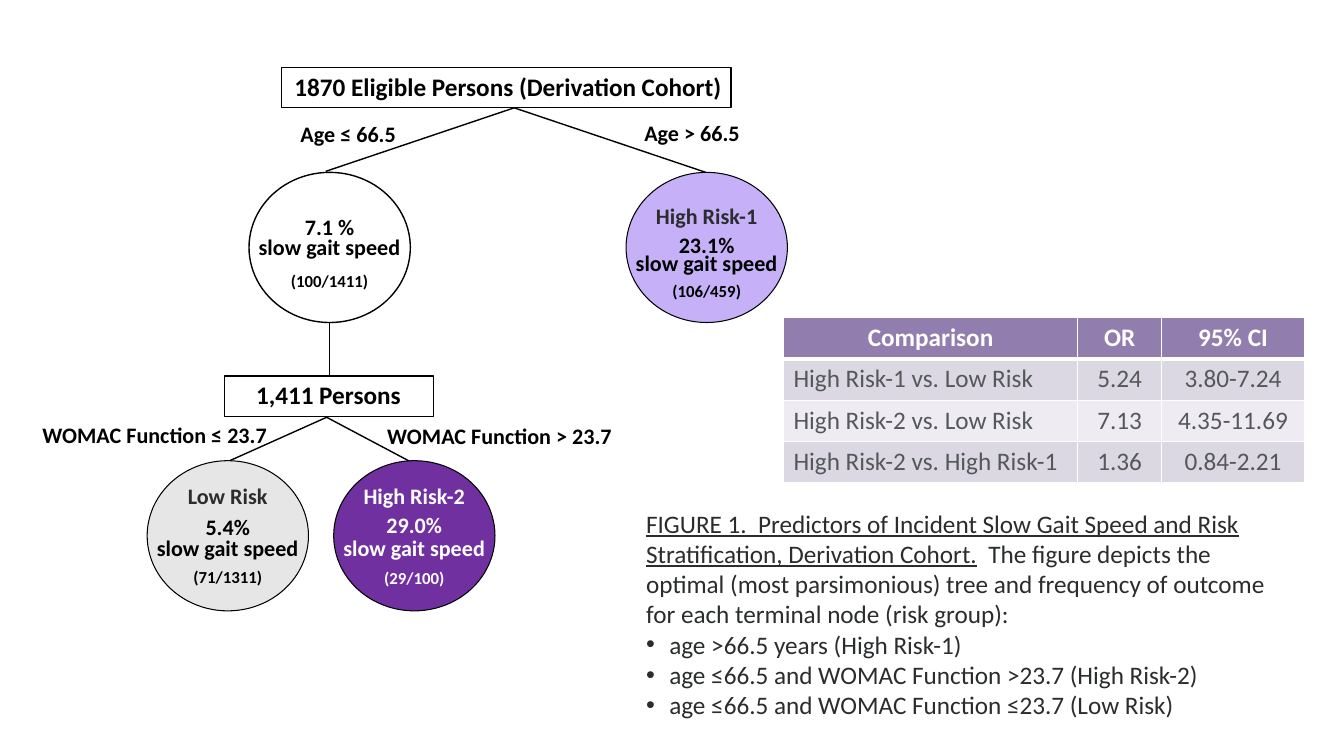
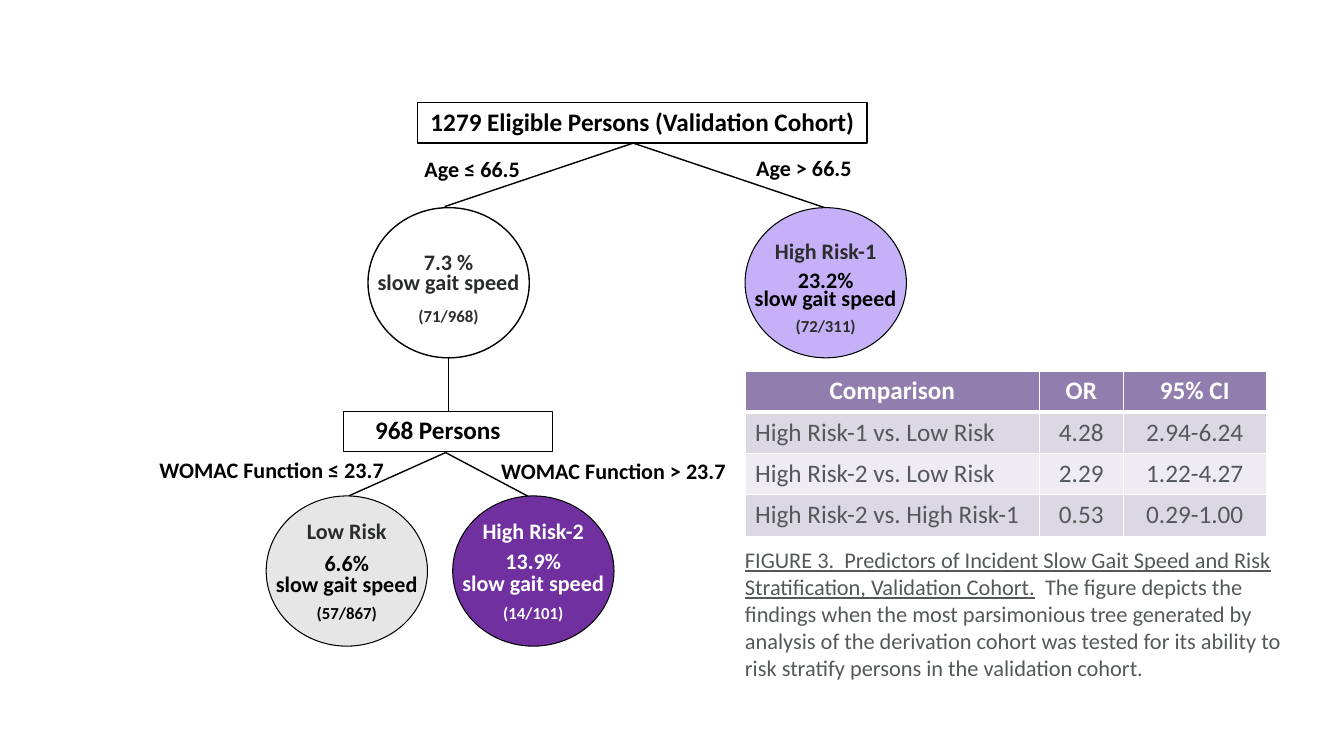
import dataclasses

import lxml.etree
import pptx
import pptx.dml.color
import pptx.enum.shapes
import pptx.enum.text
import pptx.oxml.ns
import pptx.util

Inches = pptx.util.Inches
Pt = pptx.util.Pt
ALIGN = pptx.enum.text.PP_ALIGN
ANCHOR = pptx.enum.text.MSO_ANCHOR
SHAPE = pptx.enum.shapes.MSO_SHAPE
qualified = pptx.oxml.ns.qn


@dataclasses.dataclass(frozen=True)
class Theme:
    font: str = "Calibri"
    black: str = "000000"
    white: str = "FFFFFF"
    ink: str = "2A2C2D"
    gray: str = "54585A"
    low_risk: str = "E7E6E6"
    high_risk_1: str = "C6B1F9"
    high_risk_2: str = "7030A0"
    table_header: str = "917EAE"
    table_bands: tuple = ("DCD8E3", "EEECF2")
    heading_size: float = 18
    label_size: float = 15.8
    count_size: float = 12
    line_width: float = 1


THEME = Theme()

COLUMN_WIDTHS = (2.92, 0.83, 1.42)
ROW_HEIGHT = 0.41
COMPARISONS = ("High Risk-1 vs. Low Risk", "High Risk-2 vs. Low Risk", "High Risk-2 vs. High Risk-1")

BRANCHES = (
    ((5.1, 1.07), (3.23, 1.7)),
    ((5.1, 1.07), (7, 1.71)),
    ((3.27, 3.2), (3.27, 3.73)),
    ((3.24, 4.14), (2.28, 4.57)),
    ((3.24, 4.14), (4.07, 4.58)),
)

NODES = {
    "split": ((2.47, 1.71), None, (32.4, 14.4, 22)),
    "low": ((1.46, 4.57), THEME.low_risk, (18.8, 22.3, 15.1, 18.4)),
    "high_2": ((3.31, 4.57), THEME.high_risk_2, (18.8, 20.9, 16, 19.5)),
    "high_1": ((6.21, 1.71), THEME.high_risk_1, (24.5, 20.9, 13, 17.7)),
}

BRANCH_LABELS = (("Age ≤ 66.5", 1.19, 0.95), ("Age > 66.5", 1.18, 0.95),
                 ("WOMAC Function ≤ 23.7", 4.18, 2.29), ("WOMAC Function > 23.7", 4.19, 2.29))


def color(value):
    return pptx.dml.color.RGBColor.from_string(value)


def style_font(font, size, value, bold=False):
    font.name = THEME.font
    font.size = Pt(size)
    font.bold = bold
    font.color.rgb = color(value)


def set_margins(frame, left=0.0, top=0.0, right=0.0, bottom=0.0):
    frame.margin_left, frame.margin_top = Inches(left), Inches(top)
    frame.margin_right, frame.margin_bottom = Inches(right), Inches(bottom)


def add_outlined_shape(slide, kind, left, top, width, height, fill=None):
    shape = slide.shapes.add_shape(kind, Inches(left), Inches(top), Inches(width), Inches(height))
    shape.shadow.inherit = False
    shape.line.color.rgb = color(THEME.black)
    shape.line.width = Pt(0 if fill else THEME.line_width)
    if fill:
        shape.fill.solid()
        shape.fill.fore_color.rgb = color(fill)
    else:
        shape.fill.background()
    set_margins(shape.text_frame)
    return shape


def add_group_box(slide, left, top, width, text, inset):
    frame = add_outlined_shape(slide, SHAPE.RECTANGLE, left, top, width, 0.4).text_frame
    frame.margin_left = Inches(inset)
    frame.margin_bottom = Inches(0.03)
    frame.word_wrap = True
    frame.vertical_anchor = ANCHOR.MIDDLE
    paragraph = frame.paragraphs[0]
    paragraph.alignment = ALIGN.LEFT
    paragraph.text = text
    style_font(paragraph.font, THEME.heading_size, THEME.black, True)


def add_node(slide, left, top, fill, pitches, lines):
    frame = add_outlined_shape(slide, SHAPE.OVAL, left, top, 1.6, 1.49, fill).text_frame
    frame.word_wrap = False
    frame.vertical_anchor = ANCHOR.TOP
    for index, ((text, value), pitch) in enumerate(zip(lines, pitches)):
        paragraph = frame.add_paragraph() if index else frame.paragraphs[0]
        paragraph.alignment = ALIGN.CENTER
        paragraph.line_spacing = Pt(pitch)
        paragraph.text = text
        is_count = index == len(lines) - 1
        style_font(paragraph.font, THEME.count_size if is_count else THEME.label_size, value, True)
    return frame


def add_branch(slide, start, end):
    connector = slide.shapes.add_connector(
        pptx.enum.shapes.MSO_CONNECTOR.STRAIGHT, *(Inches(value) for value in start + end))
    connector.line.color.rgb = color(THEME.black)
    connector.line.width = Pt(THEME.line_width)
    properties = connector._element.find(qualified("p:spPr"))
    lxml.etree.SubElement(properties, qualified("a:effectLst"))


def add_label(slide, left, top, width, text):
    box = slide.shapes.add_textbox(Inches(left), Inches(top), Inches(width), Inches(0.27))
    frame = box.text_frame
    set_margins(frame)
    frame.word_wrap = False
    paragraph = frame.paragraphs[0]
    paragraph.text = text
    style_font(paragraph.font, THEME.label_size, THEME.black, True)


def add_bullet(paragraph):
    properties = paragraph._p.get_or_add_pPr()
    properties.set("marL", str(Inches(0.23)))
    properties.set("indent", str(-Inches(0.23)))
    lxml.etree.SubElement(properties, qualified("a:buFont")).set("typeface", "Arial")
    lxml.etree.SubElement(properties, qualified("a:buChar")).set("char", "•")


def add_caption(slide, box, size, value, heading, body, bullets=()):
    frame = slide.shapes.add_textbox(*(Inches(length) for length in box)).text_frame
    frame.word_wrap = True
    paragraph = frame.paragraphs[0]
    run = paragraph.add_run()
    run.text = heading
    run.font.underline = True
    paragraph.add_run().text = body
    style_font(paragraph.font, size, value)
    for text in bullets:
        paragraph = frame.add_paragraph()
        add_bullet(paragraph)
        paragraph.text = text
        style_font(paragraph.font, size, value)


def set_cell_borders(cell, top, bottom):
    properties = cell._tc.get_or_add_tcPr()
    for side, width in (("L", 1), ("R", 1), ("T", top), ("B", bottom)):
        line = lxml.etree.SubElement(properties, qualified(f"a:ln{side}"))
        line.set("w", str(Pt(width)))
        fill = lxml.etree.SubElement(line, qualified("a:solidFill"))
        lxml.etree.SubElement(fill, qualified("a:srgbClr")).set("val", THEME.white)


def add_comparison_table(slide, left, top, results):
    rows = [("Comparison", "OR", "95% CI")]
    rows += [(name, *result) for name, result in zip(COMPARISONS, results)]
    table = slide.shapes.add_table(
        len(rows), len(COLUMN_WIDTHS), Inches(left), Inches(top),
        Inches(sum(COLUMN_WIDTHS)), Inches(ROW_HEIGHT * len(rows))).table
    for column, width in zip(table.columns, COLUMN_WIDTHS):
        column.width = Inches(width)
    for row_index, row in enumerate(rows):
        table.rows[row_index].height = Inches(ROW_HEIGHT)
        is_header = row_index == 0
        band = THEME.table_header if is_header else THEME.table_bands[(row_index - 1) % 2]
        for column_index, text in enumerate(row):
            cell = table.cell(row_index, column_index)
            set_cell_borders(cell, 3 if row_index == 1 else 1, 3 if is_header else 1)
            cell.fill.solid()
            cell.fill.fore_color.rgb = color(band)
            paragraph = cell.text_frame.paragraphs[0]
            paragraph.text = text
            paragraph.alignment = ALIGN.CENTER if is_header or column_index else ALIGN.LEFT
            style_font(paragraph.font, THEME.heading_size,
                       THEME.white if is_header else THEME.gray, is_header)


def add_risk_tree(slide, shift, cohort, cohort_left, subgroup, label_lefts, rates, split_color, count_color):
    across, down = shift
    add_group_box(slide, cohort_left, 0.67 + down, 4.46, cohort, 0.13)
    add_group_box(slide, 2.23 + across, 3.73 + down, 2.07, subgroup, 0.31)
    for start, end in BRANCHES:
        add_branch(slide, *((x + across, y + down) for x, y in (start, end)))
    names = {
        "split": (None, split_color, split_color),
        "low": (("Low Risk", THEME.ink), THEME.black, THEME.black),
        "high_2": (("High Risk-2", THEME.white), THEME.white, THEME.white),
        "high_1": (("High Risk-1", THEME.ink), THEME.black, count_color),
    }
    for key, ((left, top), fill, pitches) in NODES.items():
        name, rate_value, count_value = names[key]
        rate, count = rates[key]
        lines = [(rate, rate_value), ("slow gait speed", rate_value), (count, count_value)]
        add_node(slide, left + across, top + down, fill, pitches, [name] + lines if name else lines)
    for (text, top, width), left in zip(BRANCH_LABELS, label_lefts):
        add_label(slide, left, top + down, width, text)


def build_derivation_slide(slide):
    add_caption(
        slide, (6.31, 4.99, 6.41, 2.52), THEME.heading_size, THEME.ink,
        "FIGURE 1.  Predictors of Incident Slow Gait Speed and Risk Stratification, Derivation Cohort.",
        "  The figure depicts the optimal (most parsimonious) tree and frequency of outcome "
        "for each terminal node (risk group):",
        ("age >66.5 years (High Risk-1)",
         "age ≤66.5 and WOMAC Function >23.7 (High Risk-2)",
         "age ≤66.5 and WOMAC Function ≤23.7 (Low Risk)"))
    rates = {"split": ("7.1 %", "(100/1411)"), "low": ("5.4%", "(71/1311)"),
             "high_2": ("29.0%", "(29/100)"), "high_1": ("23.1%", "(106/459)")}
    add_risk_tree(slide, (0, 0), "1870 Eligible Persons (Derivation Cohort)", 2.79, "1,411 Persons",
                  (2.98, 6.39, 0.42, 3.84), rates, THEME.black, THEME.black)
    add_comparison_table(slide, 7.77, 3.15,
                         (("5.24", "3.80-7.24"), ("7.13", "4.35-11.69"), ("1.36", "0.84-2.21")))


def build_validation_slide(slide):
    rates = {"split": ("7.3 %", "(71/968)"), "low": ("6.6%", "(57/867)"),
             "high_2": ("13.9%", "(14/101)"), "high_1": ("23.2%", "(72/311)")}
    add_risk_tree(slide, (1.18, 0.35), "1279 Eligible Persons (Validation Cohort)", 4.14, "968 Persons",
                  (4.21, 7.5, 1.58, 4.97), rates, THEME.ink, THEME.ink)
    add_caption(
        slide, (7.29, 5.37, 5.58, 1.45), 16, THEME.gray,
        "FIGURE 3.  Predictors of Incident Slow Gait Speed and Risk Stratification, Validation Cohort.",
        "  The figure depicts the findings when the most parsimonious tree generated by analysis of the "
        "derivation cohort was tested for its ability to risk stratify persons in the validation cohort.")
    add_comparison_table(slide, 7.39, 3.68,
                         (("4.28", "2.94-6.24"), ("2.29", "1.22-4.27"), ("0.53", "0.29-1.00")))


def main():
    presentation = pptx.Presentation()
    presentation.slide_width = Inches(13.33)
    presentation.slide_height = Inches(7.5)
    blank_layout = presentation.slide_layouts[6]
    for build in (build_derivation_slide, build_validation_slide):
        build(presentation.slides.add_slide(blank_layout))
    presentation.save("out.pptx")


if __name__ == "__main__":
    main()
